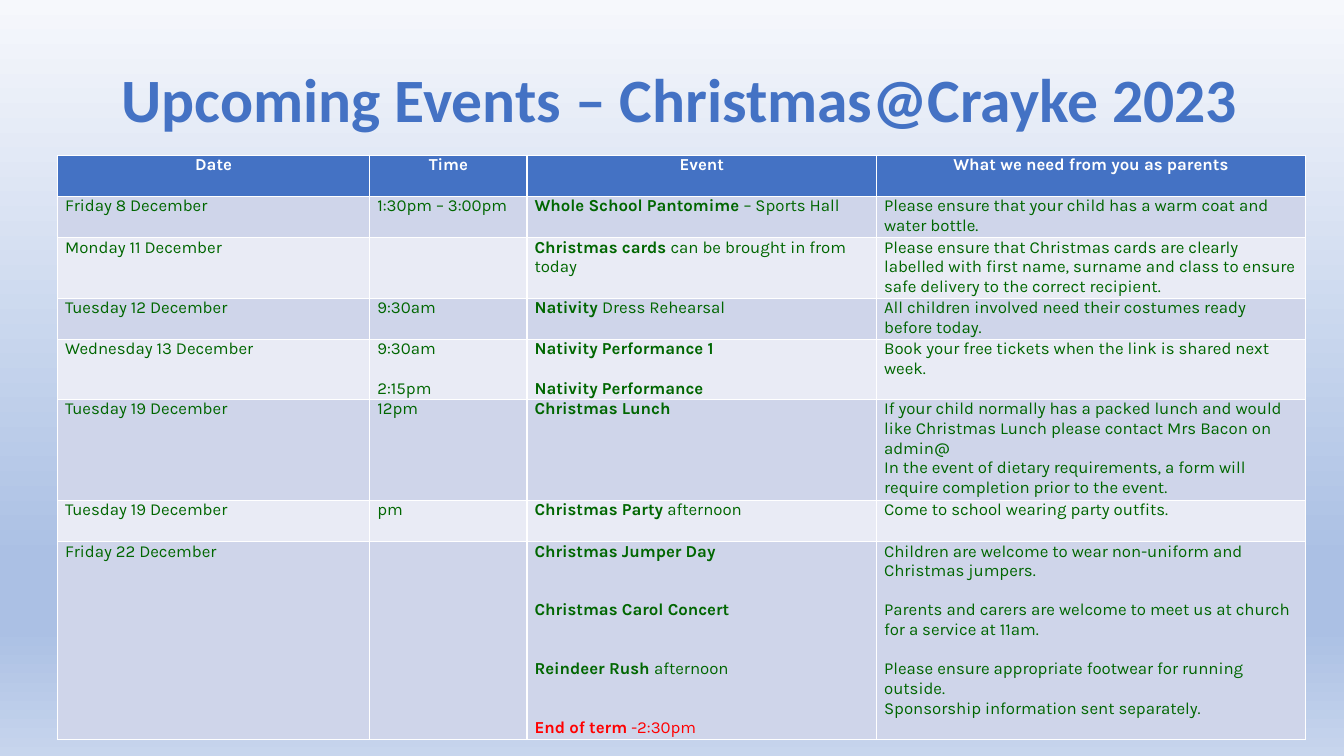
from lxml import etree
from pptx import Presentation
from pptx.dml.color import RGBColor
from pptx.enum.text import MSO_ANCHOR, PP_ALIGN
from pptx.oxml.ns import qn
from pptx.util import Cm, Pt

MIDDLE, CENTER, LEFT = MSO_ANCHOR.MIDDLE, PP_ALIGN.CENTER, PP_ALIGN.LEFT
BLUE, GREEN, RED, WHITE = "4472C4", "006600", "FF0000", "FFFFFF"
BANDS = ["E9EBF5", "CFD5EA"]
LINE = 14  # height of one table line in points


def color(code):
    return RGBColor.from_string(code)


def style(run, font, size, code, bold):
    run.font.name = font
    run.font.size = Pt(size)
    run.font.color.rgb = color(code)
    run.font.bold = bold


deck = Presentation()
deck.slide_width, deck.slide_height = Cm(33.87), Cm(19.05)
slide = deck.slides.add_slide(deck.slide_layouts[6])

# Background gradient, running from top to bottom
fill = slide.background.fill
fill.gradient()
fill.gradient_angle = 270
stops = slide.element.find(".//" + qn("a:gsLst"))
for stop in list(stops):
    stops.remove(stop)
for place, code in [(0, "F6F8FC"), (74, "ABC0E4"), (83, "ABC0E4"), (100, "C7D5ED")]:
    stop = etree.SubElement(stops, qn("a:gs"), pos=str(place * 1000))
    etree.SubElement(stop, qn("a:srgbClr"), val=code)

# Title
title = slide.shapes.add_textbox(Cm(2.82), Cm(0.74), Cm(29.21), Cm(3.68))
frame = title.text_frame
frame.word_wrap = True
frame.vertical_anchor = MIDDLE
frame.text = "Upcoming Events – Christmas@Crayke 2023"
frame.paragraphs[0].line_spacing = 0.9
style(frame.paragraphs[0].runs[0], "Calibri", 44, BLUE, True)

# Events: a new line starts a paragraph, a bar ends the bold part of an event
rows = [
    ("Date", "Time", "Event", "What we need from you as parents"),
    ("Friday 8 December", "1:30pm – 3:00pm", "Whole School Pantomime| – Sports Hall",
     "Please ensure that your child has a warm coat and water bottle."),
    ("Monday 11 December", "", "Christmas cards| can be brought in from today",
     "Please ensure that Christmas cards are clearly labelled with first name, "
     "surname and class to ensure safe delivery to the correct recipient."),
    ("Tuesday 12 December", "9:30am", "Nativity |Dress Rehearsal",
     "All children involved need their costumes ready before today."),
    ("Wednesday 13 December", "9:30am\n2:15pm",
     "Nativity Performance 1\nNativity Performance",
     "Book your free tickets when the link is shared next week."),
    ("Tuesday 19 December", "12pm", "Christmas Lunch",
     "If your child normally has a packed lunch and would like Christmas Lunch "
     "please contact Mrs Bacon on admin@\n"
     "In the event of dietary requirements, a form will require completion "
     "prior to the event."),
    ("Tuesday 19 December", "pm", "Christmas Party| afternoon",
     "Come to school wearing party outfits."),
    ("Friday 22 December", "",
     "Christmas Jumper Day\nChristmas Carol Concert\n"
     "Reindeer Rush |afternoon\nEnd of term| -2:30pm",
     "Children are welcome to wear non-uniform and Christmas jumpers.\n"
     "Parents and carers are welcome to meet us at church for a service at 11am.\n"
     "Please ensure appropriate footwear for running outside.\n"
     "Sponsorship information sent separately."),
]
# Lines of space before a paragraph, by its opening words
gaps = {"2:15pm": 1, "Nativity Performance": 1, "Christmas Carol": 2,
        "Reindeer Rush": 2, "End of term": 2, "Parents and": 1,
        "Please ensure appropriate": 1}
widths = [7.87, 3.96, 8.81, 10.81]
heights = [1.04, 1.04, 1.49, 1.04, 1.49, 2.48, 1.04, 4.95]

# Table
table = slide.shapes.add_table(len(rows), len(widths), Cm(1.45), Cm(3.91),
                               Cm(sum(widths)), Cm(sum(heights))).table
for col, width in zip(table.columns, widths):
    col.width = Cm(width)
for r, (row, height) in enumerate(zip(rows, heights)):
    table.rows[r].height = Cm(height)
    for c, text in enumerate(row):
        cell = table.cell(r, c)
        cell.margin_left = cell.margin_right = Cm(0.19)
        cell.margin_top = cell.margin_bottom = 0
        cell.fill.solid()
        cell.fill.fore_color.rgb = color(BANDS[r % 2] if r else BLUE)
        cell.text_frame.text = text.replace("|", "")
        for n, (para, part) in enumerate(zip(cell.text_frame.paragraphs, text.split("\n"))):
            para.alignment = LEFT if r else CENTER
            lines = [gap for key, gap in gaps.items() if part.startswith(key)]
            if n and lines:
                para.space_before = Pt(LINE * lines[0])
            ink = RED if part.startswith("End") else GREEN if r else WHITE
            lead, bar, rest = part.partition("|")
            if lead:
                para.runs[0].text = lead
                style(para.runs[0], "Karla", 12, ink, c == 2 or r == 0)
            if rest:
                run = para.add_run()
                run.text = rest
                style(run, "Karla", 12, ink, False)

deck.save("out.pptx")
